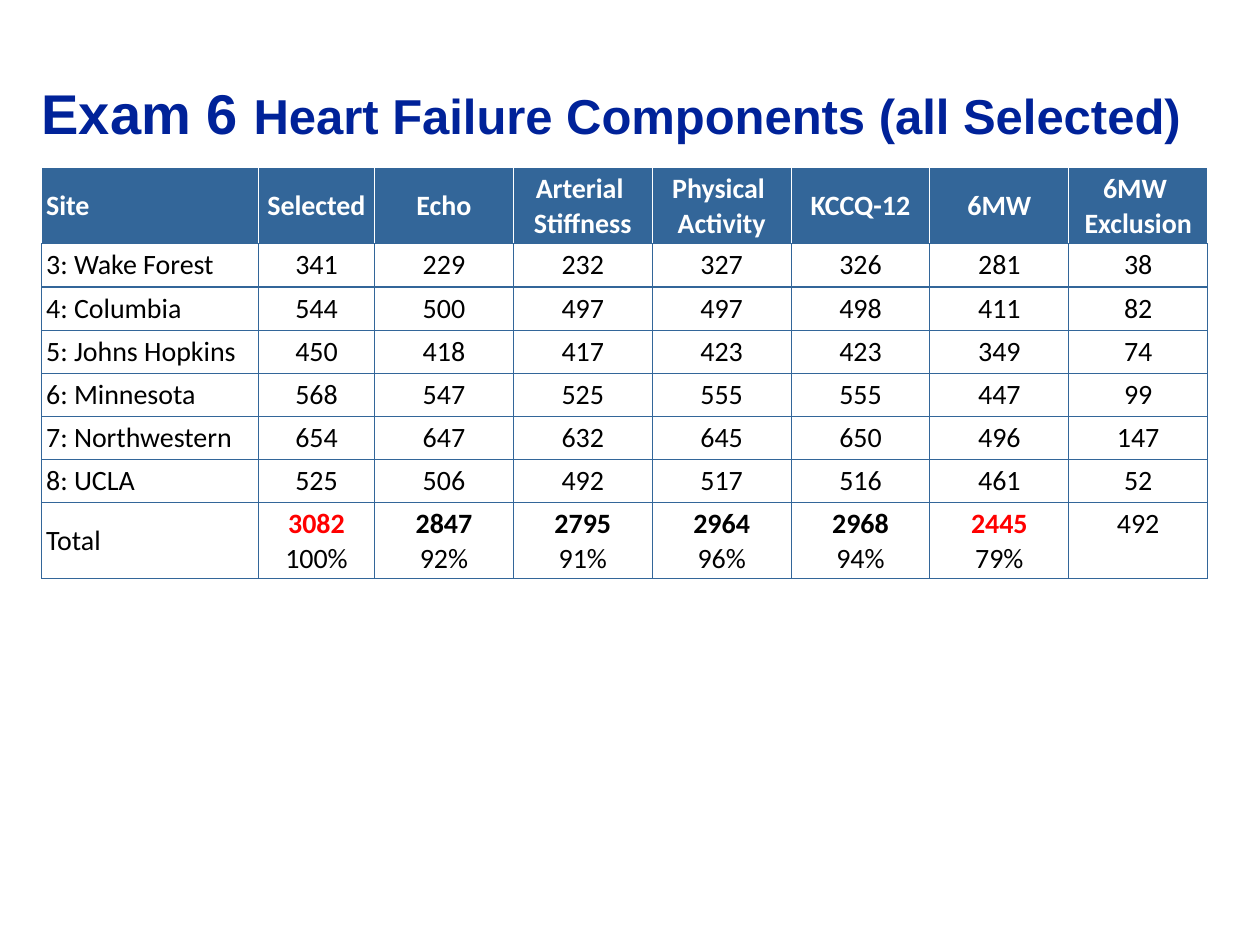
from dataclasses import dataclass

from lxml.etree import SubElement
from pptx import Presentation
from pptx.dml.color import RGBColor as RGB
from pptx.enum.text import MSO_ANCHOR as Anchor, PP_ALIGN as Align
from pptx.oxml.ns import qn
from pptx.util import Cm, Pt


@dataclass(frozen=True)
class Theme:
    title_color: str = "002299"
    accent: str = "336699"
    paper: str = "FFFFFF"
    ink: str = "000000"
    alert: str = "FF0000"
    title_font: str = "Arial"
    table_font: str = "Calibri"
    exam_size: int = 32
    topic_size: int = 28
    table_size: int = 16
    border: float = 0.75


THEME = Theme()

HEADINGS = ["Site", "Selected", "Echo", "Arterial \vStiffness",
            "Physical \vActivity", "KCCQ-12", "6MW", "6MW \vExclusion"]
SITES = [
    ["3: Wake Forest", 341, 229, 232, 327, 326, 281, 38],
    ["4: Columbia", 544, 500, 497, 497, 498, 411, 82],
    ["5: Johns Hopkins", 450, 418, 417, 423, 423, 349, 74],
    ["6: Minnesota", 568, 547, 525, 555, 555, 447, 99],
    ["7: Northwestern", 654, 647, 632, 645, 650, 496, 147],
    ["8: UCLA", 525, 506, 492, 517, 516, 461, 52],
]
TOTALS = ["Total", "3082\n100%", "2847\n92%", "2795\n91%", "2964\n96%",
          "2968\n94%", "2445\n79%", "492"]
ALERT_COLUMNS = {HEADINGS.index("Selected"), HEADINGS.index("6MW")}

# Column and row sizes in centimetres
COLUMN_WIDTHS = [4.37, 2.34] + [2.8] * 6
TALL_ROW, SITE_ROW = 1.53, 0.87
CELL_MARGIN = 0.09


def style_run(run, font, size, color, bold):
    run.font.name = font
    run.font.size = Pt(size)
    run.font.bold = bold
    run.font.color.rgb = RGB.from_string(color)


def set_borders(cell, colors):
    """Draw the left, right, top and bottom border in the given colours."""
    properties = cell._tc.get_or_add_tcPr()
    for position, (side, color) in enumerate(zip("LRTB", colors)):
        border = SubElement(properties, qn(f"a:ln{side}"), w=str(Pt(THEME.border)))
        fill = SubElement(border, qn("a:solidFill"))
        SubElement(fill, qn("a:srgbClr"), val=color)
        properties.insert(position, border)


def fill_cell(cell, content, column, background, color, bold=False):
    cell.text_frame.text = str(content)
    cell.vertical_anchor = Anchor.MIDDLE
    cell.margin_left = cell.margin_right = Cm(CELL_MARGIN)
    cell.margin_top = cell.margin_bottom = Cm(CELL_MARGIN)
    cell.fill.solid()
    cell.fill.fore_color.rgb = RGB.from_string(background)
    for paragraph in cell.text_frame.paragraphs:
        paragraph.alignment = Align.CENTER if column else Align.LEFT
        for run in paragraph.runs:
            style_run(run, THEME.table_font, THEME.table_size, color, bold)


def add_title(slide, left, top, width, height):
    frame = slide.shapes.add_textbox(left, top, width, height).text_frame
    frame.word_wrap = True
    frame.vertical_anchor = Anchor.MIDDLE
    frame.margin_left = frame.margin_right = 0
    frame.margin_top, frame.margin_bottom = Cm(0.25), Cm(0.03)
    for wording, size in (("Exam 6 ", THEME.exam_size),
                          ("Heart Failure Components (all Selected)", THEME.topic_size)):
        run = frame.paragraphs[0].add_run()
        run.text = wording
        style_run(run, THEME.title_font, size, THEME.title_color, True)


def add_site_table(slide, left, top, width, height):
    rows = [HEADINGS, *SITES, TOTALS]
    table = slide.shapes.add_table(len(rows), len(HEADINGS),
                                   left, top, width, height).table
    table.horz_banding = False
    for column, column_width in zip(table.columns, COLUMN_WIDTHS):
        column.width = Cm(column_width)
    for row, contents in zip(table.rows, rows):
        row.height = Cm(SITE_ROW if contents in SITES else TALL_ROW)
        is_heading = contents is HEADINGS
        background = THEME.accent if is_heading else THEME.paper
        color = THEME.paper if is_heading else THEME.ink
        edge = THEME.paper if is_heading else THEME.accent
        for index, (cell, content) in enumerate(zip(row.cells, contents)):
            fill_cell(cell, content, index, background, color, is_heading)
            set_borders(cell, [edge, edge, THEME.accent if contents is not HEADINGS
                               else THEME.paper, THEME.accent])

    # Counts in the total row stand out above their percentages
    for index, cell in enumerate(table.rows[len(rows) - 1].cells):
        paragraphs = cell.text_frame.paragraphs
        if len(paragraphs) > 1:
            color = THEME.alert if index in ALERT_COLUMNS else THEME.ink
            style_run(paragraphs[0].runs[0], THEME.table_font,
                      THEME.table_size, color, True)
        elif index:
            cell.vertical_anchor = Anchor.TOP


def main():
    deck = Presentation()
    deck.slide_width, deck.slide_height = Cm(25.4), Cm(19.05)
    slide = deck.slides.add_slide(deck.slide_layouts[6])
    left = Cm(0.84)
    add_title(slide, left, Cm(1.32), Cm(24.13), Cm(1.68))
    add_site_table(slide, left, Cm(3.38), Cm(sum(COLUMN_WIDTHS)),
                   Cm(2 * TALL_ROW + len(SITES) * SITE_ROW))
    deck.save("out.pptx")


if __name__ == "__main__":
    main()
